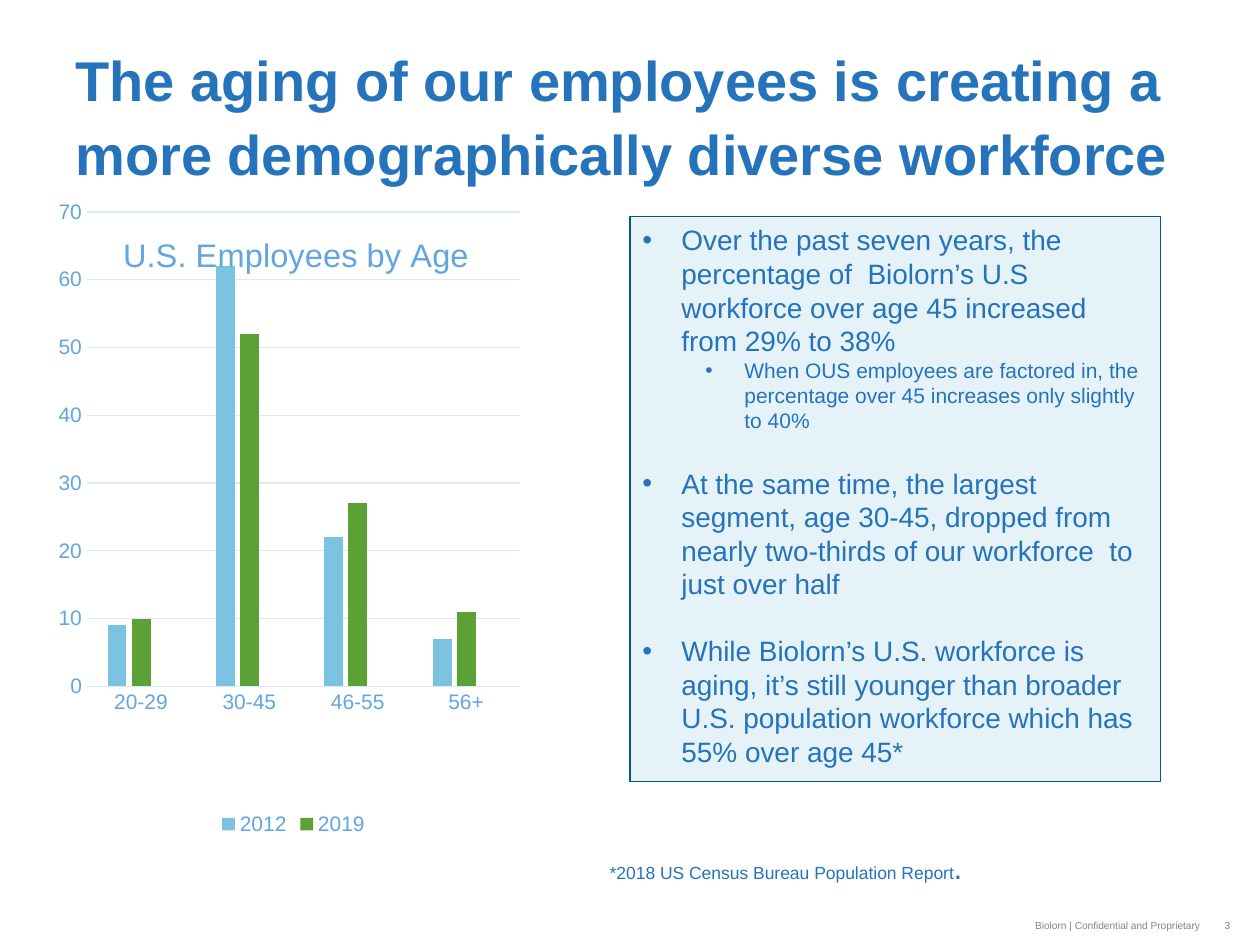
from lxml import etree
from pptx import Presentation
from pptx.chart.data import CategoryChartData
from pptx.dml.color import RGBColor
from pptx.enum.chart import XL_CHART_TYPE, XL_LEGEND_POSITION, XL_TICK_MARK
from pptx.enum.shapes import MSO_SHAPE
from pptx.enum.text import MSO_ANCHOR, PP_ALIGN
from pptx.oxml import parse_xml
from pptx.oxml.ns import nsdecls, qn
from pptx.util import Inches, Pt

COLUMN = XL_CHART_TYPE.COLUMN_CLUSTERED
LEGEND_BOTTOM = XL_LEGEND_POSITION.BOTTOM
NO_TICK = XL_TICK_MARK.NONE
RECT = MSO_SHAPE.RECTANGLE
TOP, BOTTOM = MSO_ANCHOR.TOP, MSO_ANCHOR.BOTTOM
LEFT, RIGHT = PP_ALIGN.LEFT, PP_ALIGN.RIGHT

FONT = "Arial"
COLORS = {
    "text": "2573BA", "footer": "7C878E", "chart_text": "63A5E0",
    "grid": "DBEAF8", "panel": "E5F3F9", "border": "005B7F",
    "2012": "7CC3E2", "2019": "5CA136", "Series 3": "2573BA",
}
AGES = ["20-29", "30-45", "46-55", "56+"]
SHARES = {
    "2012": [9, 62, 22, 7],
    "2019": [10, 52, 27, 11],
    "Series 3": [None] * 4,
}
# Level, size, space before, text
POINTS = [
    (0, 16, 0, "Over the past seven years, the percentage of  Biolorn’s U.S "
               "workforce over age 45 increased from 29% to 38%"),
    (1, 12, 0, "When OUS employees are factored in, the percentage over 45 "
               "increases only slightly to 40%"),
    (0, 16, 19, "At the same time, the largest segment, age 30-45, dropped from "
                "nearly two-thirds of our workforce  to just over half"),
    (0, 16, 19, "While Biolorn’s U.S. workforce is aging, it’s still younger than "
                "broader U.S. population workforce which has 55% over age 45*"),
]


def rgb(key):
    return RGBColor.from_string(COLORS[key])


def style(font, size, color, bold=False):
    font.name, font.size, font.bold = FONT, Pt(size), bold
    font.color.rgb = rgb(color)


def add_run(p, text, size, color, bold=False):
    r = p.add_run()
    r.text = text
    style(r.font, size, color, bold)
    return r


def add_textbox(s, box, anchor=TOP, align=LEFT, wrap=True):
    tf = s.shapes.add_textbox(*map(Inches, box)).text_frame
    tf.word_wrap, tf.vertical_anchor = wrap, anchor
    p = tf.paragraphs[0]
    p.alignment = align
    return p


def add_title(s, box):
    p = add_textbox(s, box)
    p.line_spacing, p.space_after = 1.1, Pt(3)
    add_run(p, "The aging of our employees is creating a more "
               "demographically diverse workforce", 32, "text", True)


def manual_layout(x, y, w=None, h=None):
    inner = '<c:layoutTarget val="inner"/>' if w else ""
    size = f'<c:w val="{w}"/><c:h val="{h}"/>' if w else ""
    return parse_xml(
        f'<c:layout {nsdecls("c")}><c:manualLayout>{inner}'
        f'<c:xMode val="edge"/><c:yMode val="edge"/>'
        f'<c:x val="{x}"/><c:y val="{y}"/>{size}</c:manualLayout></c:layout>')


def set_layout(parent, layout, index):
    for old in parent.findall(qn("c:layout")):
        parent.remove(old)
    parent.insert(index, layout)


def add_age_chart(s, box):
    data = CategoryChartData()
    data.categories = AGES
    for name, values in SHARES.items():
        data.add_series(name, values)
    chart = s.shapes.add_chart(COLUMN, *map(Inches, box), data).chart
    style(chart.font, 10, "text")

    # Title over the plot
    title = chart.chart_title
    add_run(title.text_frame.paragraphs[0], "U.S. Employees by Age", 18.6, "chart_text")
    title.include_in_layout = True
    set_layout(title._element, manual_layout(0.15, 0.045), 1)
    for overlay in title._element.findall(qn("c:overlay")):
        overlay.set("val", "1")

    # Columns
    plot = chart.plots[0]
    plot.gap_width, plot.overlap, plot.vary_by_categories = 219, -27, False
    for series in plot.series:
        series.format.fill.solid()
        series.format.fill.fore_color.rgb = rgb(series.name)
    set_layout(chart._chartSpace.chart.plotArea,
               manual_layout(0.09, 0.02, 0.86, 0.74), 0)

    # Axes
    ages, shares = chart.category_axis, chart.value_axis
    for axis in (ages, shares):
        style(axis.tick_labels.font, 12, "chart_text")
        axis.major_tick_mark = axis.minor_tick_mark = NO_TICK
    shares.minimum_scale, shares.maximum_scale, shares.major_unit = 0, 70, 10
    shares.has_major_gridlines = True
    shares.format.line.fill.background()
    for line in (ages.format.line, shares.major_gridlines.format.line):
        line.color.rgb, line.width = rgb("grid"), Pt(0.75)

    # Legend without the empty series
    chart.has_legend = True
    legend = chart.legend
    legend.position, legend.include_in_layout = LEGEND_BOTTOM, False
    style(legend.font, 12, "chart_text")
    entry = etree.Element(qn("c:legendEntry"))
    etree.SubElement(entry, qn("c:idx")).set("val", "2")
    etree.SubElement(entry, qn("c:delete")).set("val", "1")
    legend._element.insert(1, entry)


def add_bullet(p, left):
    pPr = p._p.get_or_add_pPr()
    pPr.set("marL", str(Inches(left)))
    pPr.set("indent", str(Inches(-0.31)))
    etree.SubElement(pPr, qn("a:buFont")).set("typeface", FONT)
    etree.SubElement(pPr, qn("a:buChar")).set("char", "•")


def add_points_panel(s, box):
    panel = s.shapes.add_shape(RECT, *map(Inches, box))
    panel.shadow.inherit = False
    panel.fill.solid()
    panel.fill.fore_color.rgb = rgb("panel")
    panel.line.color.rgb, panel.line.width = rgb("border"), Pt(0.75)
    tf = panel.text_frame
    tf.word_wrap, tf.vertical_anchor = True, TOP
    for i, (level, size, before, text) in enumerate(POINTS):
        p = tf.add_paragraph() if i else tf.paragraphs[0]
        p.level, p.alignment = level, LEFT
        if before:
            p.space_before = Pt(before)
        add_bullet(p, 0.31 + 0.5 * level)
        add_run(p, text, size, "text")


def add_footnote(s, box):
    p = add_textbox(s, box, wrap=False)
    add_run(p, "*2018 US Census Bureau Population Report", 10, "text")
    add_run(p, ".", 18, "text")


def add_footer(s, box):
    left, top, width, height = box
    number_width = 0.38
    split = left + width - number_width
    parts = [
        ("Biolorn | Confidential and Proprietary", left, split - left, RIGHT),
        ("3", split, number_width, LEFT),
    ]
    for text, x, w, align in parts:
        p = add_textbox(s, (x, top, w, height), BOTTOM, align)
        r = add_run(p, text, 10, "footer")
        r._r.get_or_add_rPr().set("baseline", "30000")


def main():
    prs = Presentation()
    prs.slide_width, prs.slide_height = Inches(10), Inches(7.5)
    s = prs.slides.add_slide(prs.slide_layouts[6])
    add_footer(s, (6.45, 7.1, 3.55, 0.4))
    add_title(s, (0.5, 0.26, 9, 1.25))
    add_age_chart(s, (0.33, 1.58, 4, 5.09))
    add_points_panel(s, (5, 1.72, 4.21, 4.48))
    add_footnote(s, (4.74, 6.68, 3.02, 0.4))
    prs.save("out.pptx")


if __name__ == "__main__":
    main()
